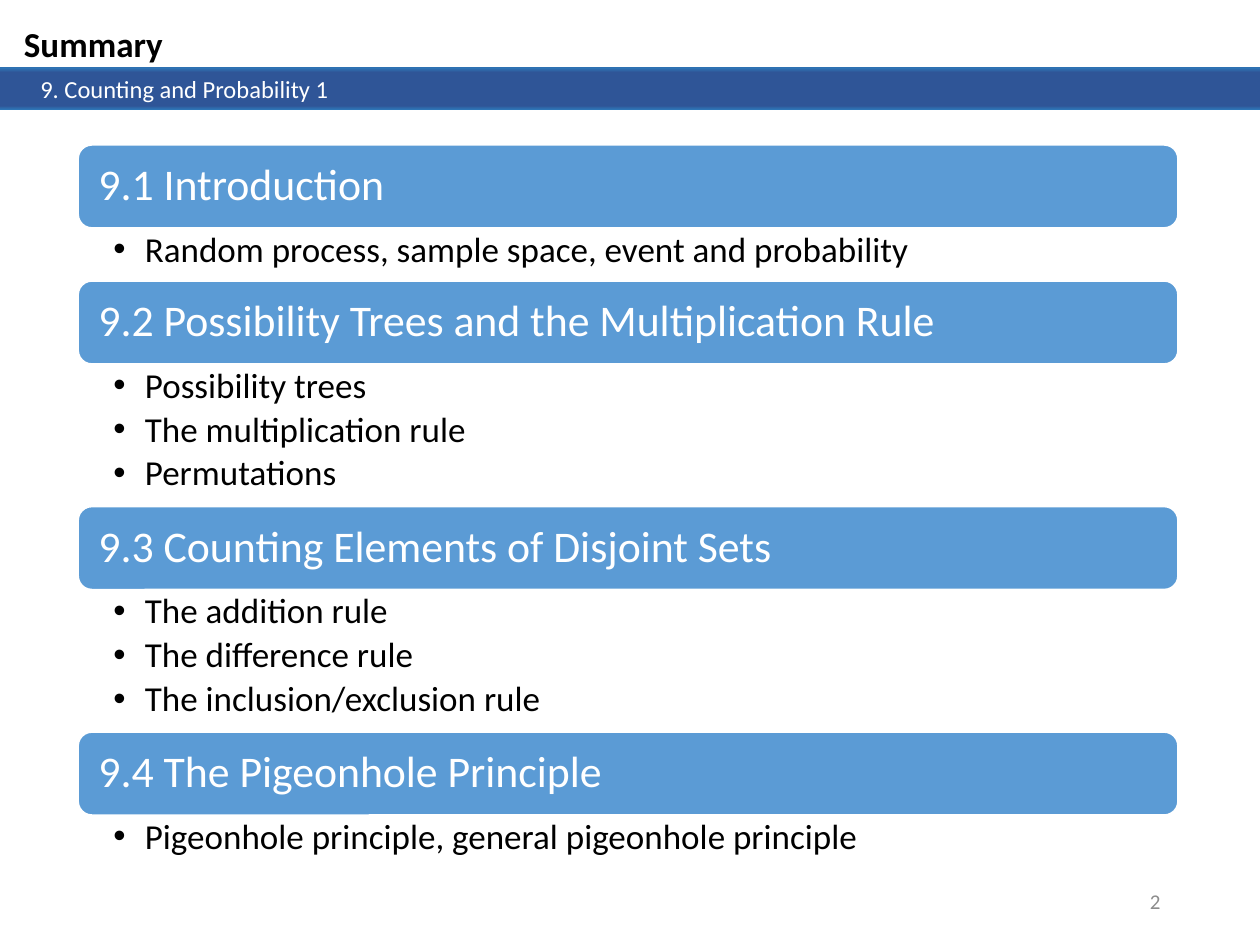
from dataclasses import dataclass

from lxml.etree import SubElement
from pptx import Presentation
from pptx.dml.color import RGBColor as Color
from pptx.enum.shapes import MSO_SHAPE as Shape
from pptx.enum.text import MSO_ANCHOR as Anchor, MSO_AUTO_SIZE as AutoSize, PP_ALIGN as Align
from pptx.oxml.ns import qn
from pptx.util import Inches, Pt


@dataclass(frozen=True)
class Theme:
    font: str = "Calibri"
    ink: str = "000000"
    paper: str = "FFFFFF"
    muted: str = "8C8C8C"
    heading: str = "5B9BD5"
    bar_stops: tuple = ((0, "2E75B6"), (11, "2F5597"), (91, "2F5597"), (100, "2E75B6"))
    title_size: int = 20
    chapter_size: int = 14
    heading_size: int = 25
    list_size: int = 20
    number_size: int = 12


THEME = Theme()
WIDTH, HEIGHT = 10, 7.5
LEFT, TOP, COLUMN = 0.62, 1.15, 8.73
HEADING_HEIGHT, FIRST_ROW, NEXT_ROW = 0.66, 0.42, 0.355

SECTIONS = (
    ("9.1 Introduction", ("Random process, sample space, event and probability",)),
    ("9.2 Possibility Trees and the Multiplication Rule",
     ("Possibility trees", "The multiplication rule", "Permutations")),
    ("9.3 Counting Elements of Disjoint Sets",
     ("The addition rule", "The difference rule", "The inclusion/exclusion rule")),
    ("9.4 The Pigeonhole Principle", ("Pigeonhole principle, general pigeonhole principle",)),
)


def place(shape, left, top, width, height):
    shape.left, shape.top = Inches(left), Inches(top)
    shape.width, shape.height = Inches(width), Inches(height)


def set_frame(shape, anchor, margins=(0.1, 0.05, 0.1, 0.05)):
    frame = shape.text_frame
    frame.word_wrap = True
    frame.auto_size = AutoSize.NONE
    frame.vertical_anchor = anchor
    (frame.margin_left, frame.margin_top,
     frame.margin_right, frame.margin_bottom) = map(Inches, margins)
    return frame


def write(para, text, size, color, bold=False, align=Align.LEFT):
    para.text = text
    para.alignment = align
    para.font.name = THEME.font
    para.font.size = Pt(size)
    para.font.bold = bold
    para.font.color.rgb = Color.from_string(color)


def add_bullet(para):
    props = para._p.get_or_add_pPr()
    props.set("marL", str(Inches(0.25)))
    props.set("indent", str(-Inches(0.25)))
    SubElement(props, qn("a:buFont"), typeface="Arial")
    SubElement(props, qn("a:buChar"), char="•")


def add_title(page, text):
    title = page.shapes.title
    place(title, 0.09, 0.13, 2.69, 0.44)
    frame = set_frame(title, Anchor.TOP)
    write(frame.paragraphs[0], text, THEME.title_size, THEME.ink, bold=True)


def add_bar(page, top, height):
    bar = page.shapes.add_shape(Shape.RECTANGLE, 0, Inches(top), Inches(WIDTH), Inches(height))
    bar.shadow.inherit = False
    bar.line.fill.background()
    bar.fill.gradient()
    bar.fill.gradient_angle = 270
    stops = bar._element.spPr.find(qn("a:gradFill")).find(qn("a:gsLst"))
    stops.clear()
    for percent, color in THEME.bar_stops:
        stop = SubElement(stops, qn("a:gs"), pos=str(percent * 1000))
        SubElement(stop, qn("a:srgbClr"), val=color)
    return bar


def add_chapter(page, text):
    add_bar(page, 0.53, 0.3)
    frame = set_frame(add_bar(page, 0.54, 0.33), Anchor.MIDDLE, (0.32, 0, 0.1, 0))
    write(frame.paragraphs[0], text, THEME.chapter_size, THEME.paper)


def add_heading(page, text, top):
    box = page.shapes.add_shape(Shape.ROUNDED_RECTANGLE, Inches(LEFT), Inches(top),
                                Inches(COLUMN), Inches(HEADING_HEIGHT))
    box.shadow.inherit = False
    box.fill.solid()
    box.fill.fore_color.rgb = Color.from_string(THEME.heading)
    box.line.color.rgb = Color.from_string(THEME.paper)
    box.line.width = Pt(1)
    para = set_frame(box, Anchor.MIDDLE, (0.13, 0.1, 0.13, 0.1)).paragraphs[0]
    write(para, text, THEME.heading_size, THEME.paper)
    para.line_spacing = 0.9


def fill_list(body, items, top, height):
    place(body, LEFT, top, COLUMN, height)
    frame = set_frame(body, Anchor.TOP, (0.28, 0.03, 0.19, 0.03))
    for index, item in enumerate(items):
        para = frame.add_paragraph() if index else frame.paragraphs[0]
        write(para, item, THEME.list_size, THEME.ink)
        para.level = 1
        para.line_spacing = 0.9
        para.space_before = Pt(0)
        para.space_after = Pt(3.5)
        add_bullet(para)


def add_sections(page):
    bodies = [holder for holder in page.placeholders if holder.placeholder_format.idx]
    top = TOP
    for body, (heading, items) in zip(bodies, SECTIONS):
        add_heading(page, heading, top)
        top += HEADING_HEIGHT
        height = FIRST_ROW + NEXT_ROW * (len(items) - 1)
        fill_list(body, items, top, height)
        top += height


def add_page_number(page, text):
    box = page.shapes.add_textbox(0, 0, 0, 0)
    place(box, 7.06, 6.95, 2.25, 0.4)
    frame = set_frame(box, Anchor.MIDDLE)
    write(frame.paragraphs[0], text, THEME.number_size, THEME.muted, align=Align.RIGHT)


def main():
    deck = Presentation()
    deck.slide_width, deck.slide_height = Inches(WIDTH), Inches(HEIGHT)
    page = deck.slides.add_slide(deck.slide_layouts.get_by_name("Comparison"))
    add_chapter(page, "9. Counting and Probability 1")
    add_title(page, "Summary")
    add_sections(page)
    add_page_number(page, "2")
    deck.save("out.pptx")


if __name__ == "__main__":
    main()
